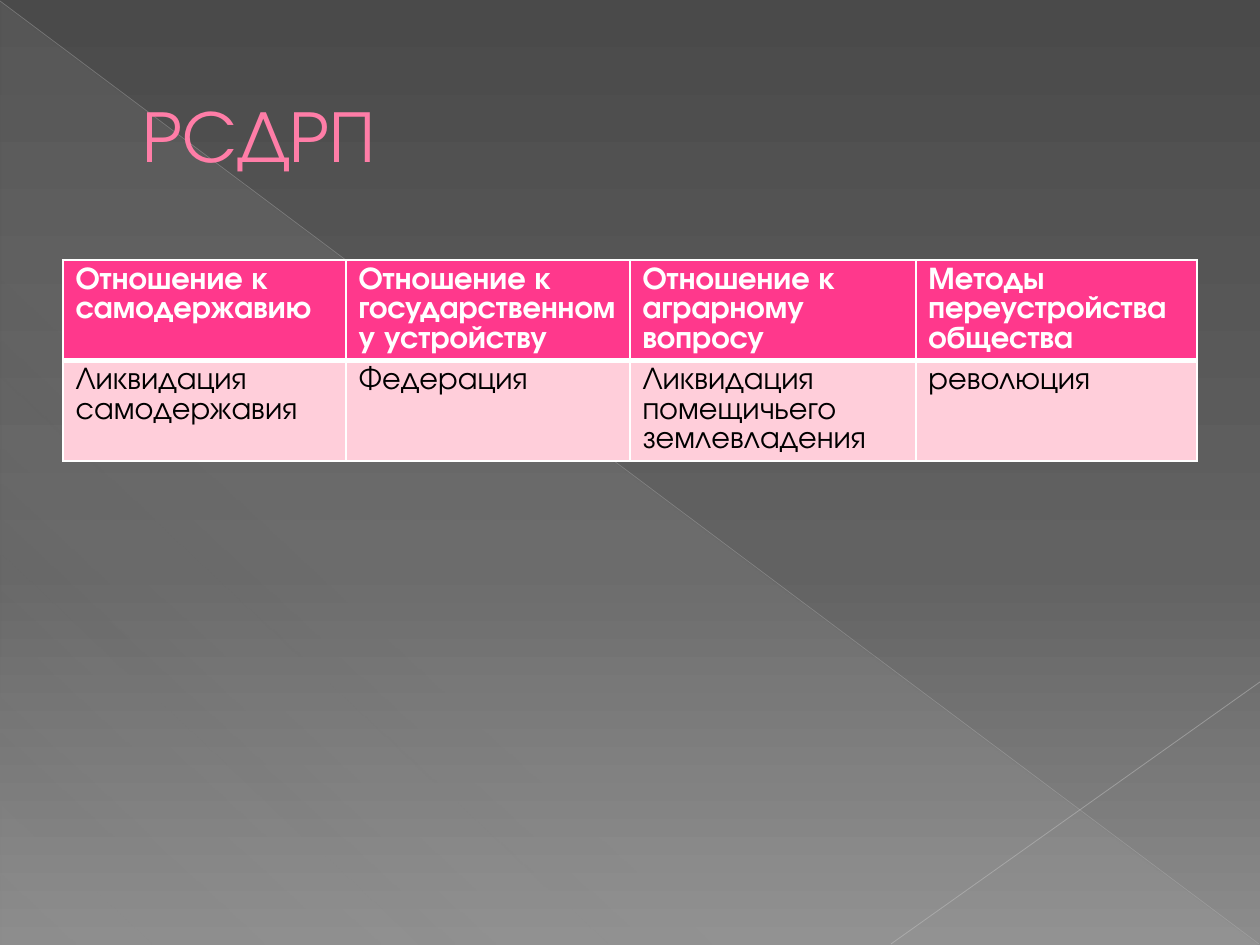
"""Builds a slide with a title and a table of the party's programme."""
from lxml import etree
from pptx import Presentation
from pptx import util as u
from pptx.dml.color import RGBColor
from pptx.enum import shapes, text
from pptx.oxml import ns

PX = u.Inches(1) // 126
FONT = "TeX Gyre Adventor"

WHITE = RGBColor(0xFF, 0xFF, 0xFF)
BLACK = RGBColor(0, 0, 0)
ROSE = RGBColor(0xFF, 0x7D, 0xA7)
WINE = RGBColor(0xB1, 0x27, 0x61)
PINK = RGBColor(0xFF, 0x38, 0x8C)
BLUSH = RGBColor(0xFF, 0xCE, 0xDA)
DARK = RGBColor(0x4A, 0x4A, 0x4A)
MID = RGBColor(0x62, 0x62, 0x62)
LIGHT = RGBColor(0x8C, 0x8C, 0x8C)
PALE = RGBColor(0xD2, 0xD2, 0xD2)
GREY = RGBColor(0xBF, 0xBF, 0xBF)
ASH = RGBColor(0xC6, 0xC6, 0xC6)

BACKDROP = ((0, DARK, 100), (60, MID, 100), (100, LIGHT, 100))
SHEEN = ((0, PALE, 10), (70, PALE, 8), (100, PALE, 1))

COLS = (283, 284, 286, 281)
ROW = 52
HEADS = (
    "Отношение к самодержавию",
    "Отношение к государственному устройству",
    "Отношение к аграрному вопросу",
    "Методы переустройства общества",
)
AIMS = (
    "Ликвидация самодержавия",
    "Федерация",
    "Ликвидация помещичьего землевладения",
    "революция",
)


def px(*nums):
    """Turn pixel lengths into EMU."""
    return [num * PX for num in nums]


def find(root, tag):
    """Find the first drawing element with the given tag."""
    return root.find(".//" + ns.qn("a:" + tag))


def add(root, tag, **attrs):
    """Append a drawing element with the given attributes."""
    node = etree.SubElement(root, ns.qn("a:" + tag))
    for key, val in attrs.items():
        node.set(key, str(val))
    return node


def fade(color, alpha):
    """Set the opacity of a colour element in percent."""
    add(color, "alpha", val=alpha * 1000)


def stroke(root, tag, spot, width, color):
    """Insert a solid line element at a given spot."""
    line = add(root, tag, w=u.Pt(width))
    add(add(line, "solidFill"), "srgbClr", val=color)
    root.insert(spot, line)


def blend(fill, root, stops, angle):
    """Fill with a gradient turned clockwise by the angle."""
    fill.gradient()
    fill.gradient_angle = 360 - angle
    group = find(root, "gsLst")
    group.clear()
    for place, color, alpha in stops:
        stop = add(group, "gs", pos=place * 1000)
        fade(add(stop, "srgbClr", val=color), alpha)


def style(frame, size, color, bold=False):
    """Align the paragraphs left and format their runs."""
    for para in frame.paragraphs:
        para.alignment = text.PP_ALIGN.LEFT
        for run in para.runs:
            run.font.name = FONT
            run.font.size = u.Pt(size)
            run.font.bold = bold
            run.font.color.rgb = color


def wedge(slide, box):
    """Draw the faint triangle."""
    shape = slide.shapes.add_shape(shapes.MSO_SHAPE.RIGHT_TRIANGLE, *px(*box))
    shape.shadow.inherit = False
    shape.line.fill.background()
    blend(shape.fill, shape.element, SHEEN, 133)


def ray(slide, ends, color, width, alpha):
    """Draw a thin translucent line."""
    link = slide.shapes.add_connector(shapes.MSO_CONNECTOR.STRAIGHT, *px(*ends))
    link.line.width = u.Pt(width)
    link.line.color.rgb = color
    props = link.element.spPr
    fade(find(props, "srgbClr"), alpha)
    add(props, "effectLst")


def title(slide, words, box, indent):
    """Fill the title and bring it to the front."""
    shape = slide.shapes.title
    shape.left, shape.top, shape.width, shape.height = px(*box)
    frame = shape.text_frame
    frame.text = words
    frame.vertical_anchor = text.MSO_ANCHOR.MIDDLE
    style(frame, 42, ROSE)
    para = find(shape.element, "pPr")
    para.set("marL", str(indent * PX))
    para.set("indent", "0")
    stroke(find(shape.element, "rPr"), "ln", 0, 0.5, WINE)
    tree = shape.element.getparent()
    tree.append(shape.element)


def fill_row(row, words, back, color, bold):
    """Write and colour the cells of one row."""
    row.height = ROW * PX
    for cell, word in zip(row.cells, words):
        cell.text_frame.text = word
        style(cell.text_frame, 18, color, bold)
        cell.fill.solid()
        cell.fill.fore_color.rgb = back


def edge_cells(frame):
    """Draw white cell borders, thicker below the heading row."""
    cells = frame.element.iter(ns.qn("a:tcPr"))
    for index, props in enumerate(cells):
        base = 3 if index < len(COLS) else 1
        sides = (("lnL", 1), ("lnR", 1), ("lnT", 1), ("lnB", base))
        for spot, (side, width) in enumerate(sides):
            stroke(props, side, spot, width, WHITE)


def grid(slide, left, top):
    """Build the table with its heading row."""
    box = px(left, top, sum(COLS), 2 * ROW)
    frame = slide.shapes.add_table(2, len(COLS), *box)
    table = frame.table
    for col, width in zip(table.columns, COLS):
        col.width = width * PX
    head, body = table.rows
    fill_row(head, HEADS, PINK, WHITE, True)
    fill_row(body, AIMS, BLUSH, BLACK, False)
    edge_cells(frame)


def main():
    """Build and save the slide."""
    deck = Presentation()
    deck.slide_width, deck.slide_height = px(1260, 945)
    slide = deck.slides.add_slide(deck.slide_layouts[5])
    blend(slide.background.fill, slide.element, BACKDROP, 90)
    wedge(slide, (1, 2, 1258, 943))
    ray(slide, (0, 1, 1259, 944), GREY, 0.39, 35)
    ray(slide, (1260, 682, 891, 944), ASH, 0.47, 45)
    title(slide, "РСДРП", (63, 37, 1134, 193), 67)
    grid(slide, 63, 260)
    deck.save("out.pptx")


if __name__ == "__main__":
    main()
